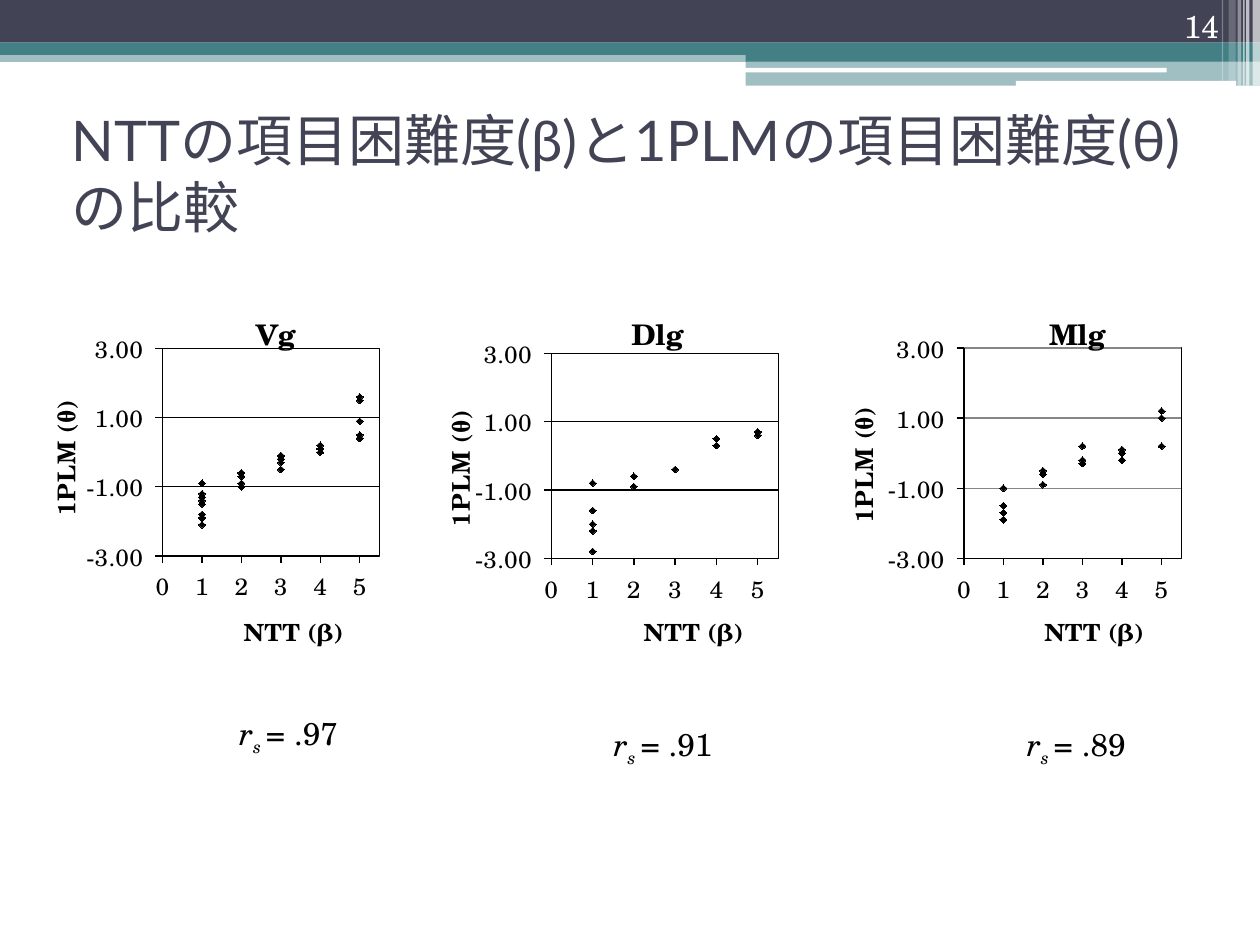
"""Build a slide comparing NTT and 1PLM item difficulty in three scatter charts."""
import pptx
import pptx.chart.data
import pptx.dml.color
import pptx.enum.chart
import pptx.enum.shapes
import pptx.enum.text
import pptx.oxml
import pptx.oxml.ns
import pptx.util

Cm, Pt = pptx.util.Cm, pptx.util.Pt
RGBColor = pptx.dml.color.RGBColor
qn = pptx.oxml.ns.qn
SHAPE = pptx.enum.shapes.MSO_SHAPE
XL = pptx.enum.chart
ALIGN, ANCHOR = pptx.enum.text.PP_ALIGN, pptx.enum.text.MSO_ANCHOR

NAVY = RGBColor(0x42, 0x44, 0x56)
TEAL = RGBColor(0x43, 0x80, 0x86)
WHITE = RGBColor(0xFF, 0xFF, 0xFF)
BLACK = RGBColor(0, 0, 0)
GRAY = RGBColor(0x86, 0x86, 0x86)
SANS, SERIF = "Lato", "TeX Gyre Schola"

BARS = [
    (0, 1.02, 25.4, 0.23, TEAL, 50),
    (0, 0, 25.4, 0.86, NAVY, 100),
    (0, 0.86, 25.4, 0.25, TEAL, 100),
    (15.03, 0.99, 10.37, 0.25, TEAL, 100),
    (15.03, 1.23, 10.37, 0.5, TEAL, 50),
]
ROUND_BARS = [
    (15.02, 1.37, 8.5, 0.09, WHITE, 100),
    (20.48, 1.63, 4.44, 0.1, WHITE, 100),
]
STRIPES = [
    (25.25, 0, 0.15, 1.73, WHITE, 65),
    (25.12, 0, 0.07, 1.73, WHITE, 65),
    (25.06, 0, 0.03, 1.73, WHITE, 60),
    (24.95, 0, 0.07, 1.73, WHITE, 40),
    (24.77, 0, 0.14, 1.63, WHITE, 20),
    (24.63, 0, 0.03, 1.63, WHITE, 30),
]
CHARTS = [
    dict(name="Vg", left=0.79, width=7.54, grid=BLACK, plot=(0.33, 0.13, 0.58, 0.61),
         titles=((0.565, 0), (0.535, 0.89), (0, 0.28)), rs=".97", rs_box=(4.57, 14.27, 2.59, 1.02),
         x=[3, 3, 5, 3, 2, 1, 5, 3, 4, 1, None, 1, 1, 1, 2, 2, 5, 4, 5, None, 5, None,
            2, 2, 2, 3, 5, 1, None, 1, 4, 1, 3, 3, 1, 1],
         y=[-0.2, -0.5, 0.4, -0.2, -0.7, -1.3, 0.5, -0.2, 0.1, -1.9, None, -0.9, -0.9,
            -1.4, -0.6, -1, 1.6, 0.2, 0.9, None, 0.4, None, -0.6, -0.9, -0.9, -0.1, 1.5,
            -1.2, None, -2.1, 0, -1.5, -0.3, -0.1, -1.8, -1.9]),
    dict(name="Dlg", left=8.74, width=7.54, grid=BLACK, plot=(0.315, 0.144, 0.607, 0.603),
         titles=((0.515, 0), (0.55, 0.89), (0, 0.31)), rs=".91", rs_box=(12.12, 14.5, 2.74, 1.02),
         x=[4, 1, 2, 5, 5, 1, 1, 1, 3, 5, 1, 2, 4],
         y=[0.3, -2.2, -0.6, 0.7, 0.6, -0.8, -1.6, -2, -0.4, 0.7, -2.8, -0.9, 0.5]),
    dict(name="Mlg", left=16.87, width=7.65, grid=GRAY, plot=(0.335, 0.128, 0.573, 0.619),
         titles=((0.545, 0), (0.535, 0.89), (0, 0.3)), rs=".89", rs_box=(20.45, 14.5, 2.59, 1.02),
         x=[2, 1, 3, 2, 3, 1, 3, 3, 4, 1, 5, 5, 5, 2, 1, 3, 1, 4, 4],
         y=[-0.9, -1, -0.3, -0.6, 0.2, -1.7, -0.3, -0.2, 0, -1.9, 1.2, 0.2, 1, -0.5, -1.5,
            -0.3, -1.9, -0.2, 0.1]),
]
CHART_TOP, CHART_HEIGHT = 6.14, 7.12


def add_bar(s, kind, left, top, width, height, color, alpha):
    sp = s.shapes.add_shape(kind, Cm(left), Cm(top), Cm(width), Cm(height))
    sp.shadow.inherit = False
    sp.line.fill.background()
    sp.fill.solid()
    sp.fill.fore_color.rgb = color
    if alpha < 100:
        clr = sp._element.spPr.find(".//" + qn("a:srgbClr"))
        clr.append(pptx.oxml.parse_xml(
            f'<a:alpha {pptx.oxml.ns.nsdecls("a")} val="{alpha * 1000}"/>'))


def add_run(p, text, size=14, font=SERIF, color=BLACK, bold=False, italic=False, baseline=0):
    r = p.add_run()
    r.text = text
    r.font.size, r.font.name = Pt(size), font
    r.font.bold, r.font.italic = bold, italic
    r.font.color.rgb = color
    if baseline:
        r.font._element.set("baseline", str(baseline * 1000))


def add_text(s, box, runs, align=ALIGN.LEFT, anchor=ANCHOR.TOP, wrap=True):
    tf = s.shapes.add_textbox(*map(Cm, box)).text_frame
    tf.word_wrap, tf.vertical_anchor = wrap, anchor
    p = tf.paragraphs[0]
    p.alignment = align
    for text, fmt in runs:
        add_run(p, text, **fmt)


def set_layout(parent, **parts):
    layout = parent.find(qn("c:layout"))
    if layout is None:
        layout = parent.makeelement(qn("c:layout"), {})
        parent.insert(0, layout)
    manual = layout.makeelement(qn("c:manualLayout"), {})
    layout.append(manual)
    for tag, val in parts.items():
        manual.append(manual.makeelement(qn("c:" + tag), {"val": str(val)}))


def set_title(title, text, place, size=14):
    add_run(title.text_frame.paragraphs[0], text, size=size, bold=True)
    set_layout(title._element, xMode="edge", yMode="edge", x=place[0], y=place[1])


def set_line(line, color):
    line.color.rgb = color
    line.width = Pt(0.75)


def add_scatter(s, c):
    data = pptx.chart.data.XyChartData()
    series = data.add_series("Series 1")
    for x, y in zip(c["x"], c["y"]):
        series.add_data_point(x, y)
    chart = s.shapes.add_chart(XL.XL_CHART_TYPE.XY_SCATTER, Cm(c["left"]), Cm(CHART_TOP),
                               Cm(c["width"]), Cm(CHART_HEIGHT), data).chart
    chart.has_legend = False
    chart.font.size, chart.font.name = Pt(14), SERIF
    chart.font.color.rgb = BLACK
    chart.plots[0].vary_by_categories = False

    ser = chart.plots[0].series[0]
    for pt in list(ser._element.iter(qn("c:pt"))):
        if pt.findtext(qn("c:v")) in ("None", "", None):
            pt.getparent().remove(pt)
    ser.smooth = False
    ser.format.line.fill.background()
    ser.marker.style, ser.marker.size = XL.XL_MARKER_STYLE.DIAMOND, 4
    ser.marker.format.fill.solid()
    ser.marker.format.fill.fore_color.rgb = BLACK
    set_line(ser.marker.format.line, BLACK)

    x_axis, y_axis = chart.category_axis, chart.value_axis
    for axis, low, high, step, form in ((x_axis, 0, 5.5, 1, "0"), (y_axis, -3, 3, 2, "0.00_ ")):
        axis.minimum_scale, axis.maximum_scale, axis.major_unit = low, high, step
        axis.major_tick_mark = XL.XL_TICK_MARK.OUTSIDE
        axis.minor_tick_mark = XL.XL_TICK_MARK.NONE
        axis.tick_labels.number_format = form
        axis.tick_labels.number_format_is_linked = False
        set_line(axis.format.line, BLACK)
    x_axis.has_major_gridlines = False
    y_axis.has_major_gridlines = True
    set_line(y_axis.major_gridlines.format.line, c["grid"])
    y_axis.crosses = XL.XL_AXIS_CROSSES.MINIMUM

    name_at, x_at, y_at = c["titles"]
    set_title(chart.chart_title, c["name"], name_at, 16.8)
    set_title(x_axis.axis_title, "NTT (β)", x_at)
    set_title(y_axis.axis_title, "1PLM (θ)", y_at)
    y_axis.axis_title.text_frame._txBody.bodyPr.set("rot", "-5400000")

    area = chart._chartSpace.chart.plotArea
    x, y, w, h = c["plot"]
    set_layout(area, layoutTarget="inner", xMode="edge", yMode="edge", x=x, y=y, w=w, h=h)
    area.append(pptx.oxml.parse_xml(
        f'<c:spPr {pptx.oxml.ns.nsdecls("c", "a")}><a:noFill/><a:ln w="9525"><a:solidFill>'
        f'<a:srgbClr val="{BLACK}"/></a:solidFill></a:ln></c:spPr>'))


def main():
    prs = pptx.Presentation()
    prs.slide_width, prs.slide_height = Cm(25.4), Cm(19.05)
    s = prs.slides.add_slide(prs.slide_layouts[6])
    for kind, bars in ((SHAPE.RECTANGLE, BARS), (SHAPE.ROUNDED_RECTANGLE, ROUND_BARS),
                       (SHAPE.RECTANGLE, STRIPES)):
        for bar in bars:
            add_bar(s, kind, *bar)
    add_text(s, (1.19, 1.79, 23.14, 3.38),
             [("NTTの項目困難度(β)と1PLMの項目困難度(θ)の比較", dict(size=32, font=SANS, color=NAVY))],
             anchor=ANCHOR.MIDDLE)
    add_text(s, (22.71, 0, 2.11, 1.02), [("14", dict(size=18, color=WHITE))],
             align=ALIGN.RIGHT, anchor=ANCHOR.BOTTOM)
    for c in CHARTS:
        add_scatter(s, c)
    for c in CHARTS:
        add_text(s, c["rs_box"], [
            ("r", dict(size=18, italic=True)),
            ("s ", dict(size=18, italic=True, baseline=-25)),
            ("= ", dict(size=18, italic=True)),
            (c["rs"], dict(size=18)),
        ], wrap=False)
    prs.save("out.pptx")


if __name__ == "__main__":
    main()
